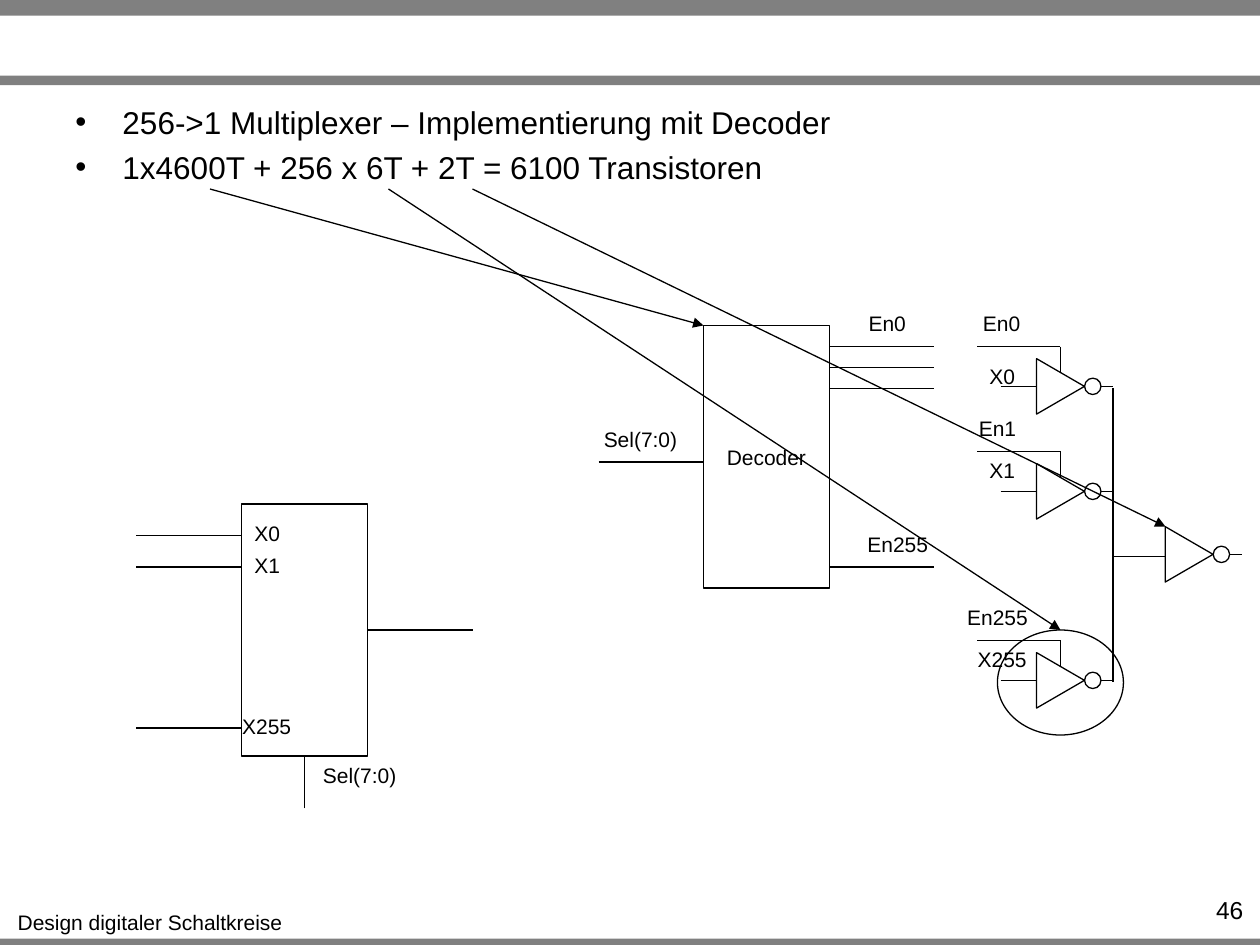
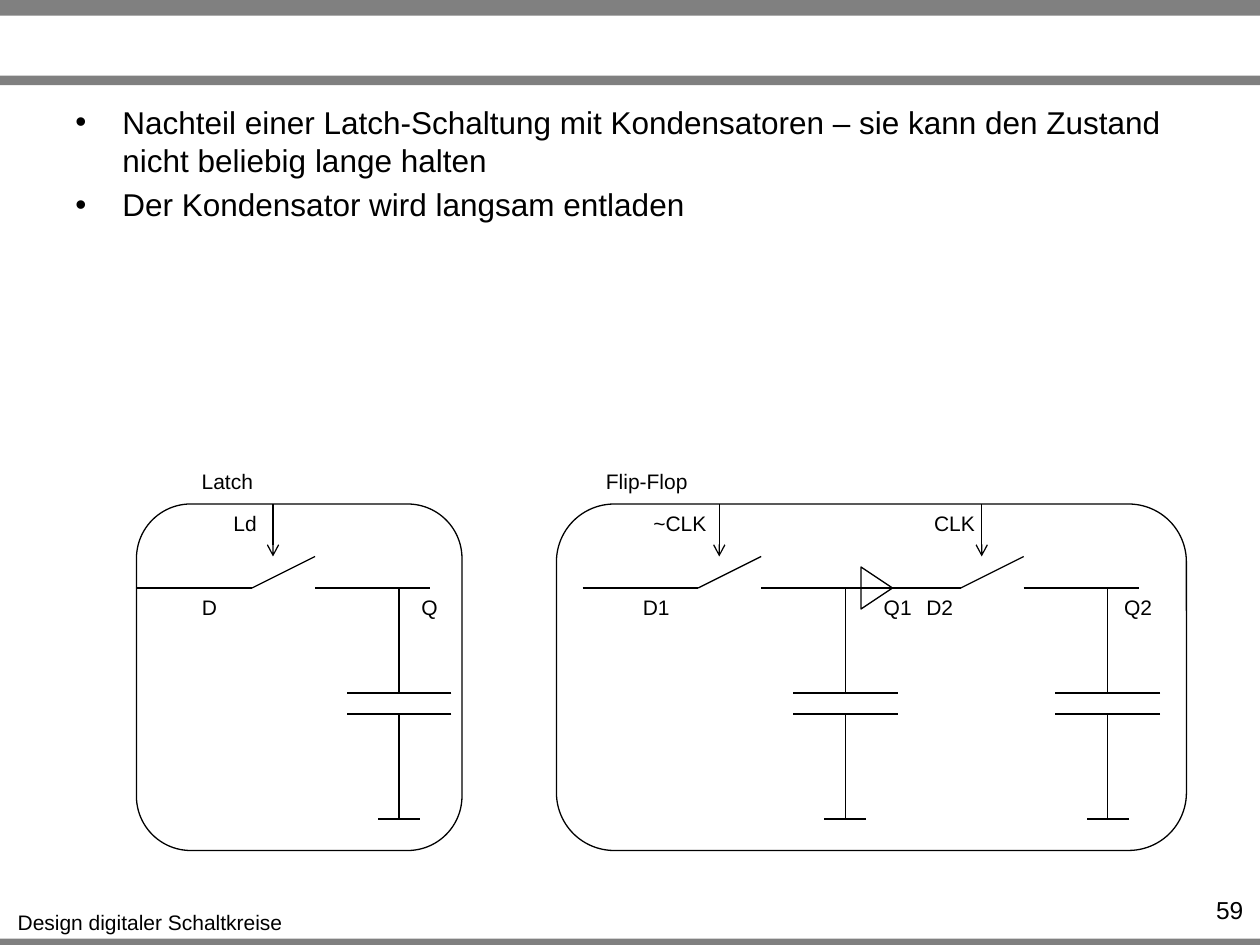
"""Two lecture slides on digital circuit design: a decoder multiplexer and a capacitor latch.

All positions are counted in grid steps of a twelfth of an inch.
"""
from dataclasses import dataclass

from lxml.etree import SubElement
from pptx import Presentation
from pptx.dml.color import RGBColor
from pptx.enum.shapes import MSO_CONNECTOR, MSO_SHAPE
from pptx.enum.text import MSO_ANCHOR, MSO_AUTO_SIZE, PP_ALIGN
from pptx.oxml.ns import qn
from pptx.util import Cm, Pt


@dataclass(frozen=True)
class Theme:
    font: str = "Arial"
    ink: RGBColor = RGBColor(0, 0, 0)
    paper: RGBColor = RGBColor(255, 255, 255)
    band: RGBColor = RGBColor(128, 128, 128)
    body: Pt = Pt(18)
    number: Pt = Pt(14)
    label: Pt = Pt(12)
    rule: Pt = Pt(0.75)
    grid: float = 2.54 / 12


T = Theme()
LABEL_H = 3.6


def add_box(shapes, kind, x, y, w, h, text="", size=T.label, align=PP_ALIGN.CENTER,
            wrap=False, fill=None, outline=True):
    """Add a preset shape, or a text box when kind is None."""
    place = [Cm(v * T.grid) for v in (x, y, w, h)]
    if kind is None:
        sp = shapes.add_textbox(*place)
    else:
        sp = shapes.add_shape(kind, *place)
        sp.shadow.inherit = False
        if fill is None:
            sp.fill.background()
        else:
            sp.fill.solid()
            sp.fill.fore_color.rgb = fill
        if outline:
            sp.line.color.rgb = T.ink
            sp.line.width = T.rule
        else:
            sp.line.fill.background()
    if text:
        tf = sp.text_frame
        tf.text = text
        tf.word_wrap = wrap
        tf.vertical_anchor = MSO_ANCHOR.MIDDLE if kind else MSO_ANCHOR.TOP
        if not kind and not wrap:
            tf.auto_size = MSO_AUTO_SIZE.SHAPE_TO_FIT_TEXT
        for p in tf.paragraphs:
            p.alignment = align
            for r in p.runs:
                r.font.name = T.font
                r.font.size = size
                r.font.color.rgb = T.ink
    return sp


def add_line(shapes, x1, y1, x2, y2, head=None):
    """Add a straight line, with an arrowhead at its end if head is given."""
    ends = [Cm(v * T.grid) for v in (x1, y1, x2, y2)]
    cn = shapes.add_connector(MSO_CONNECTOR.STRAIGHT, *ends)
    cn.line.color.rgb = T.ink
    cn.line.width = T.rule
    sp_pr = cn._element.spPr
    if head:
        SubElement(sp_pr.find(qn("a:ln")), qn("a:tailEnd"), type=head)
    SubElement(sp_pr, qn("a:effectLst"))
    return cn


prs = Presentation()
prs.slide_width, prs.slide_height = Cm(25.4), Cm(19.05)

pages = [
    ("46", ["256->1 Multiplexer – Implementierung mit Decoder",
            "1x4600T + 256 x 6T + 2T = 6100 Transistoren"]),
    ("59", ["Nachteil einer Latch-Schaltung mit Kondensatoren – sie kann den Zustand "
            "nicht beliebig lange halten",
            "Der Kondensator wird langsam entladen"]),
]
for number, bullets in pages:
    s = prs.slides.add_slide(prs.slide_layouts[6])
    for y, h in [(89.4, 0.9), (0, 1.5), (7.2, 0.9)]:
        add_box(s.shapes, MSO_SHAPE.RECTANGLE, 0, y, 120, h, fill=T.band, outline=False)
    add_box(s.shapes, None, 0.4, 86, 27.8, LABEL_H, "Design digitaler Schaltkreise")
    body = add_box(s.shapes, None, 6, 9.2, 108, 8.9, "\n".join(bullets), T.body,
                   PP_ALIGN.LEFT, wrap=True)
    for i, p in enumerate(body.text_frame.paragraphs):
        pPr = p._p.get_or_add_pPr()
        pPr.set("marL", str(Cm(0.95)))
        pPr.set("indent", str(-Cm(0.95)))
        SubElement(pPr, qn("a:buFont"), typeface=T.font)
        SubElement(pPr, qn("a:buChar"), char="•")
        p.space_before = Pt(4 if i else 0)
    add_box(s.shapes, None, 109.2, 84.7, 10.4, 2.9, number, T.number,
            PP_ALIGN.RIGHT, wrap=True)

mux_slide, latch_slide = prs.slides

sh = mux_slide.shapes
mux = add_box(sh, MSO_SHAPE.RECTANGLE, 23, 48, 12, 24)
for y in (51, 54, 69.33):
    add_line(sh, 13, y, 23, y)
add_line(sh, 35, 60, 45, 60).begin_connect(mux, 3)
add_line(sh, 29, 77, 29, 72).end_connect(mux, 2)

add_box(sh, MSO_SHAPE.RECTANGLE, 67, 31, 12, 25, "Decoder")
add_line(sh, 57, 44, 67, 44)
for y in (33, 35, 37, 54):
    add_line(sh, 79, y, 89, y)

gates = [(101, 36.8, True), (101, 46.8, True), (101, 64.8, True), (113.25, 52.8, False)]
for x, y, tristate in gates:
    gate = sh.add_group_shape().shapes
    add_line(gate, x + 2.3, y, x + 5, y)
    add_box(gate, MSO_SHAPE.OVAL, x + 2.3, y - 0.78, 1.56, 1.56, fill=T.paper)
    add_box(gate, MSO_SHAPE.ISOSCELES_TRIANGLE, x - 2.64, y - 2.28, 5.28, 4.56).rotation = 90
    if tristate:
        add_line(gate, x - 5.7, y, x - 2.3, y)
        add_line(gate, x, y - 1.3, x, y - 3.8)
        add_line(gate, x, y - 3.8, x - 8, y - 3.8)
add_line(sh, 106, 37, 106, 65)
add_line(sh, 106, 53, 111, 53)

mux_labels = [
    ("X0", 23, 49, 4.9), ("X1", 23, 52, 4.9), ("X255", 21.85, 67.33, 7.1),
    ("Sel(7:0)", 29.5, 72, 9.5), ("Sel(7:0)", 56.25, 40, 9.5),
    ("En0", 81.5, 29, 6), ("En255", 81.35, 50, 8.3),
    ("En0", 92.4, 29, 6), ("En1", 92, 39, 6), ("En255", 90.85, 57, 8.3),
    ("X0", 93, 34, 4.9), ("X1", 93, 43, 4.9), ("X255", 91.9, 61, 7.1),
]
for text, x, y, w in mux_labels:
    add_box(sh, None, x, y, w, LABEL_H, text)

circle = add_box(sh, MSO_SHAPE.OVAL, 95, 60, 12, 10)
add_line(sh, 37, 18, 101, 60, "triangle").end_connect(circle, 0)
add_line(sh, 20, 18, 67, 31, "triangle")
add_line(sh, 45, 18, 111, 50.15, "triangle")

sh = latch_slide.shapes
for x in (24, 66.5, 91.5):
    add_line(sh, x - 11, 56, x, 56)
    add_line(sh, x, 56, x + 6, 53)
    add_line(sh, x + 6, 56, x + 17, 56)
    add_line(sh, x + 14, 56, x + 14, 66)
    for y in (66, 68):
        add_line(sh, x + 19, y, x + 9, y)
    add_line(sh, x + 14, 68, x + 14, 78)
    add_line(sh, x + 16, 78, x + 12, 78)
    add_line(sh, x + 2, 48, x + 2, 53, "arrow")

for x, w in [(13, 31), (53, 60)]:
    add_box(sh, MSO_SHAPE.ROUNDED_RECTANGLE, x, 48, w, 33)
add_box(sh, MSO_SHAPE.ISOSCELES_TRIANGLE, 81.5, 54.5, 4, 3).rotation = 90

latch_rows = {
    44: [("Latch", 18, 7.3), ("Flip-Flop", 56.5, 10.2)],
    48: [("Ld", 21, 4.7), ("~CLK", 61, 7.5), ("CLK", 87.7, 6.4)],
    56: [("D", 18, 3.9), ("Q", 38.9, 4), ("D1", 60, 5), ("Q1", 82.9, 5.2),
         ("D2", 87, 5), ("Q2", 105.8, 5.2)],
}
for y, labels in latch_rows.items():
    for text, x, w in labels:
        add_box(sh, None, x, y, w, LABEL_H, text)

prs.save("out.pptx")
